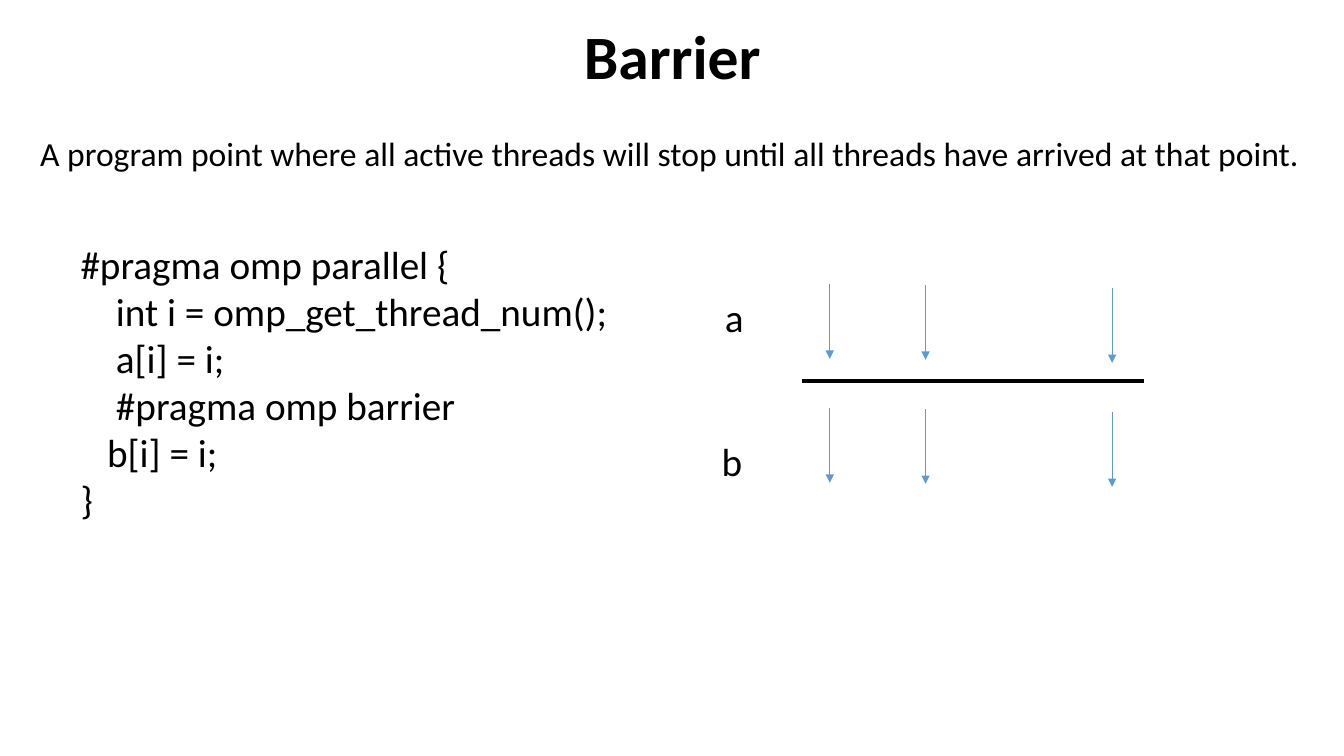
import pptx
import pptx.util
import pptx.dml.color
import pptx.enum.shapes
import pptx.enum.text
import pptx.oxml
import pptx.oxml.ns
from pptx.util import Inches

# Content
FONT, BLACK, BLUE = "Calibri", "000000", "5B9BD5"
TITLE = "Barrier"
LEAD = ("A program point where all active threads will stop "
        "until all threads have arrived at that point.")
SPACE = 0.088  # width of one code space at 28 pt
CODE = [  # (indent in spaces, line)
    (0, "#pragma omp parallel {"),
    (4, "int i = omp_get_thread_num();"),
    (4, "a[i] = i;"),
    (4, "#pragma omp barrier"),
    (3, "b[i] = i;"),
    (0, "}"),
]
LABELS = [("a", 7.09, 2.86), ("b", 7.06, 4.29)]
THREADS = [(8.23, 0), (9.18, 0.01), (11.03, 0.04)]  # x, drop
PHASES = [2.82, 4.05]  # arrow tops before and after the barrier
REACH = 0.74
BAR = (7.95, 3.78, 11.35, 3.78)


def color(code):
    return pptx.dml.color.RGBColor.from_string(code)


def add_text(slide, box, lines, size, bold=False):
    frame = slide.shapes.add_textbox(*map(Inches, box)).text_frame
    frame.word_wrap = True
    frame.text = "\n".join(lines)
    for par in frame.paragraphs:
        for run in par.runs:
            run.font.name = FONT
            run.font.size = pptx.util.Pt(size)
            run.font.bold = bold
            run.font.color.rgb = color(BLACK)
    return frame


def add_line(slide, ends, code, width, arrow=False):
    line = slide.shapes.add_connector(
        pptx.enum.shapes.MSO_CONNECTOR.STRAIGHT, *map(Inches, ends))
    line.line.color.rgb = color(code)
    line.line.width = pptx.util.Pt(width)
    if arrow:
        tail = pptx.oxml.parse_xml(
            f'<a:tailEnd {pptx.oxml.ns.nsdecls("a")} type="triangle"/>')
        line.line._get_or_add_ln().append(tail)
    line._element.spPr.append(pptx.oxml.parse_xml(
        f'<a:effectLst {pptx.oxml.ns.nsdecls("a")}/>'))


def main():
    deck = pptx.Presentation()
    deck.slide_width, deck.slide_height = Inches(13.33), Inches(7.5)
    slide = deck.slides.add_slide(deck.slide_layouts[6])

    # Title and definition
    title = add_text(slide, (0.92, 0.17, 11.5, 0.84), [TITLE], 44, True)
    title.vertical_anchor = pptx.enum.text.MSO_ANCHOR.MIDDLE
    title.paragraphs[0].alignment = pptx.enum.text.PP_ALIGN.CENTER
    title.paragraphs[0].line_spacing = 0.9
    add_text(slide, (0.3, 1.27, 12.92, 0.5), [LEAD], 24)

    # Code with indents
    code = add_text(slide, (0.7, 2.32, 5.58, 2.93),
                    [line for _, line in CODE], 28)
    code.vertical_anchor = pptx.enum.text.MSO_ANCHOR.MIDDLE
    for par, (depth, _) in zip(code.paragraphs, CODE):
        props = par._p.get_or_add_pPr()
        props.set("marL", str(Inches(depth * SPACE)))
        props.set("indent", "0")

    # Threads on both sides of the barrier
    for top in PHASES:
        for x, drop in THREADS:
            y = top + drop
            add_line(slide, (x, y, x, y + REACH), BLUE, 0.5, True)
    add_line(slide, BAR, BLACK, 2.75)
    for name, x, y in LABELS:
        add_text(slide, (x, y, 0.56, 0.57), [name], 28)

    deck.save("out.pptx")


if __name__ == "__main__":
    main()
